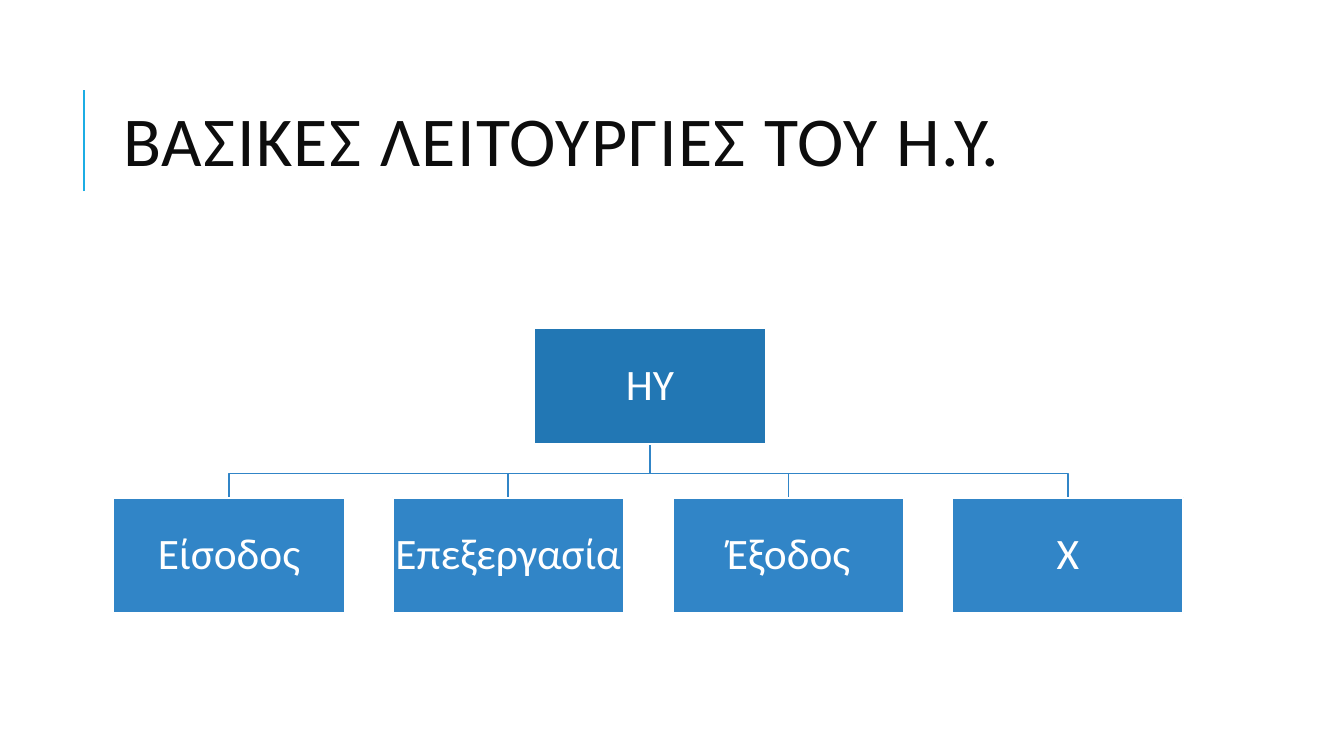
import pptx
import pptx.util
import pptx.dml.color
import pptx.enum.shapes
import pptx.enum.text

PX = 9525
FONT = "Calibri"
WHITE = pptx.dml.color.RGBColor(0xFF, 0xFF, 0xFF)
INK = pptx.dml.color.RGBColor(0x0D, 0x0D, 0x0D)
ACCENT = pptx.dml.color.RGBColor(0x1C, 0xAD, 0xE4)
ROOT_BLUE = pptx.dml.color.RGBColor(0x22, 0x77, 0xB4)
CHILD_BLUE = pptx.dml.color.RGBColor(0x31, 0x85, 0xC7)

FUNCTIONS = ["Είσοδος", "Επεξεργασία", "Έξοδος", "Χ"]
NODE_WIDTH, NODE_HEIGHT = 220, 110


def px(*lengths):
    """Turn pixel lengths into EMU."""
    return [pptx.util.Emu(length * PX) for length in lengths]


def write_line(frame, text, size, color, line_spacing):
    """Write one middle-anchored line of text and return its paragraph and run."""
    frame.word_wrap = True
    frame.vertical_anchor = pptx.enum.text.MSO_ANCHOR.MIDDLE
    para = frame.paragraphs[0]
    para.line_spacing = line_spacing
    span = para.add_run()
    span.text = text
    span.font.name = FONT
    span.font.size = pptx.util.Pt(size)
    span.font.color.rgb = color
    return para, span


def add_title(page, left, top, width, height):
    """Place the heading with the accent rule to its left."""
    rule_x, rule_top, rule_bottom = left - 28, top + 25, top + 121
    rule = page.shapes.add_connector(
        pptx.enum.shapes.MSO_CONNECTOR.STRAIGHT,
        *px(rule_x, rule_bottom, rule_x, rule_top))
    rule.line.color.rgb = ACCENT
    rule.line.width = pptx.util.Pt(1.5)
    rule._element.spPr.append(pptx.oxml.xmlchemy.OxmlElement("a:effectLst"))
    box = page.shapes.add_textbox(*px(left, top, width, height))
    para, span = write_line(
        box.text_frame, "ΒΑΣΙΚΕΣ ΛΕΙΤΟΥΡΓΙΕΣ ΤΟΥ Η.Υ.", 50, INK, 0.8)
    span._r.get_or_add_rPr().set("spc", "100")


def add_node(page, left, top, text, fill):
    """Place one labelled rectangle of the hierarchy."""
    node = page.shapes.add_shape(
        pptx.enum.shapes.MSO_SHAPE.RECTANGLE,
        *px(left, top, NODE_WIDTH, NODE_HEIGHT))
    node.shadow.inherit = False
    node.fill.solid()
    node.fill.fore_color.rgb = fill
    node.line.color.rgb = WHITE
    node.line.width = pptx.util.Pt(1.25)
    frame = node.text_frame
    frame.margin_left, frame.margin_top, frame.margin_right, frame.margin_bottom = px(2, 2, 2, 2)
    para, span = write_line(frame, text, 31, WHITE, 0.9)
    para.alignment = pptx.enum.text.PP_ALIGN.CENTER


def add_branch(page, start_x, start_y, end_x, end_y):
    """Draw the elbow line from the root down to one child."""
    bar_y = start_y + 28
    builder = page.shapes.build_freeform(start_x, start_y, scale=PX)
    builder.add_line_segments(
        [(start_x, bar_y), (end_x, bar_y), (end_x, end_y)], close=False)
    branch = builder.convert_to_shape()
    branch.shadow.inherit = False
    branch.fill.background()
    branch.line.color.rgb = CHILD_BLUE
    branch.line.width = pptx.util.Pt(1.25)


def add_hierarchy(page, left, top, width, height):
    """Place the root node, its children in equal steps, and the branches."""
    root_left = left + 401
    child_top = top + height - NODE_HEIGHT
    step = (width - NODE_WIDTH) / (len(FUNCTIONS) - 1)
    child_lefts = [left + round(step * index) for index in range(len(FUNCTIONS))]
    half = NODE_WIDTH // 2
    for child_left in reversed(child_lefts):
        add_branch(page, root_left + half, top + NODE_HEIGHT,
                   child_left + half, child_top)
    add_node(page, root_left, top, "HY", ROOT_BLUE)
    for child_left, name in zip(child_lefts, FUNCTIONS):
        add_node(page, child_left, child_top, name, CHILD_BLUE)


def main():
    """Build the deck and save it."""
    deck = pptx.Presentation()
    deck.slide_width, deck.slide_height = px(1280, 720)
    page = deck.slides.add_slide(deck.slide_layouts[6])
    add_title(page, 108, 61, 1020, 157)
    add_hierarchy(page, 108, 313, 1019, 271)
    deck.save("out.pptx")


if __name__ == "__main__":
    main()
